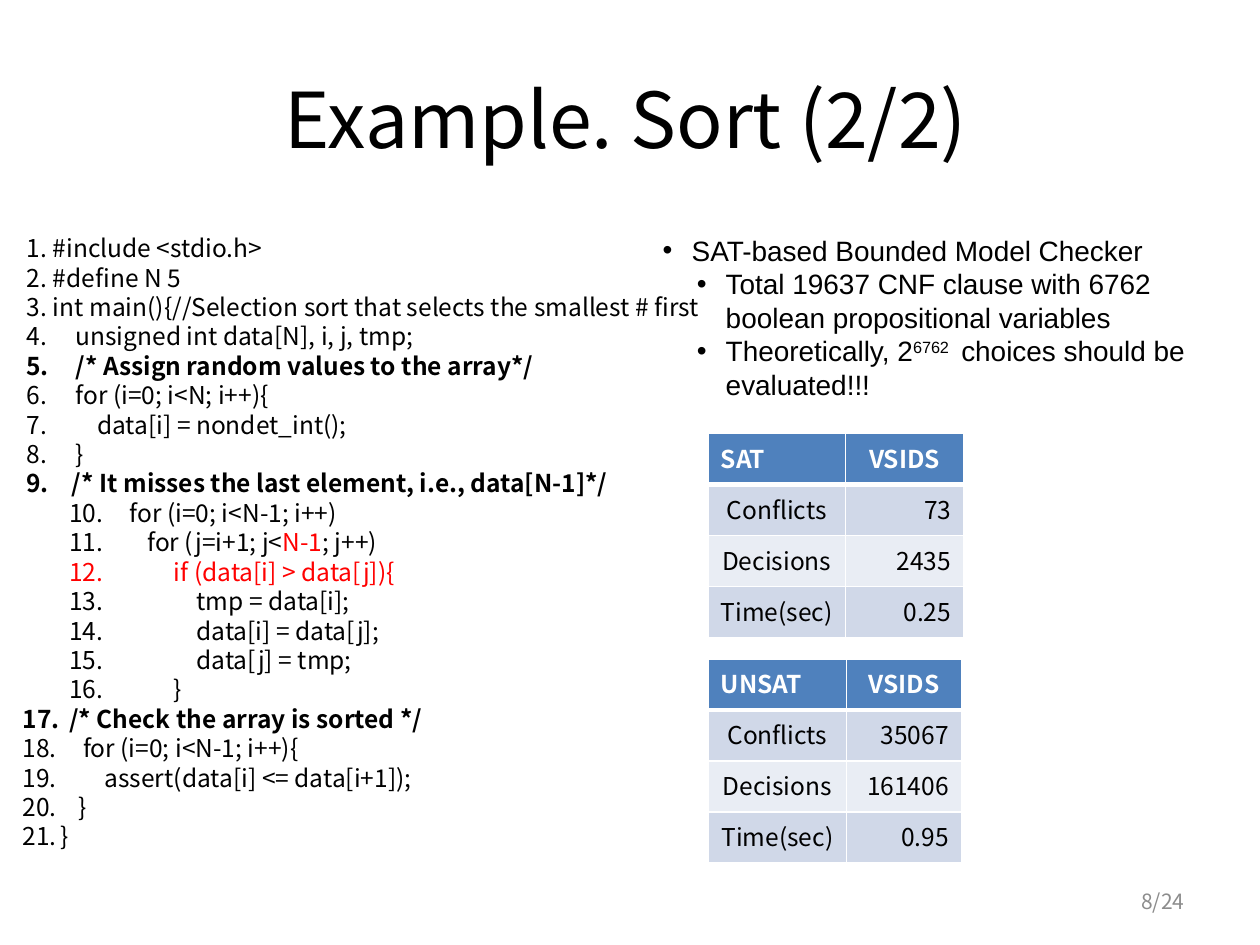
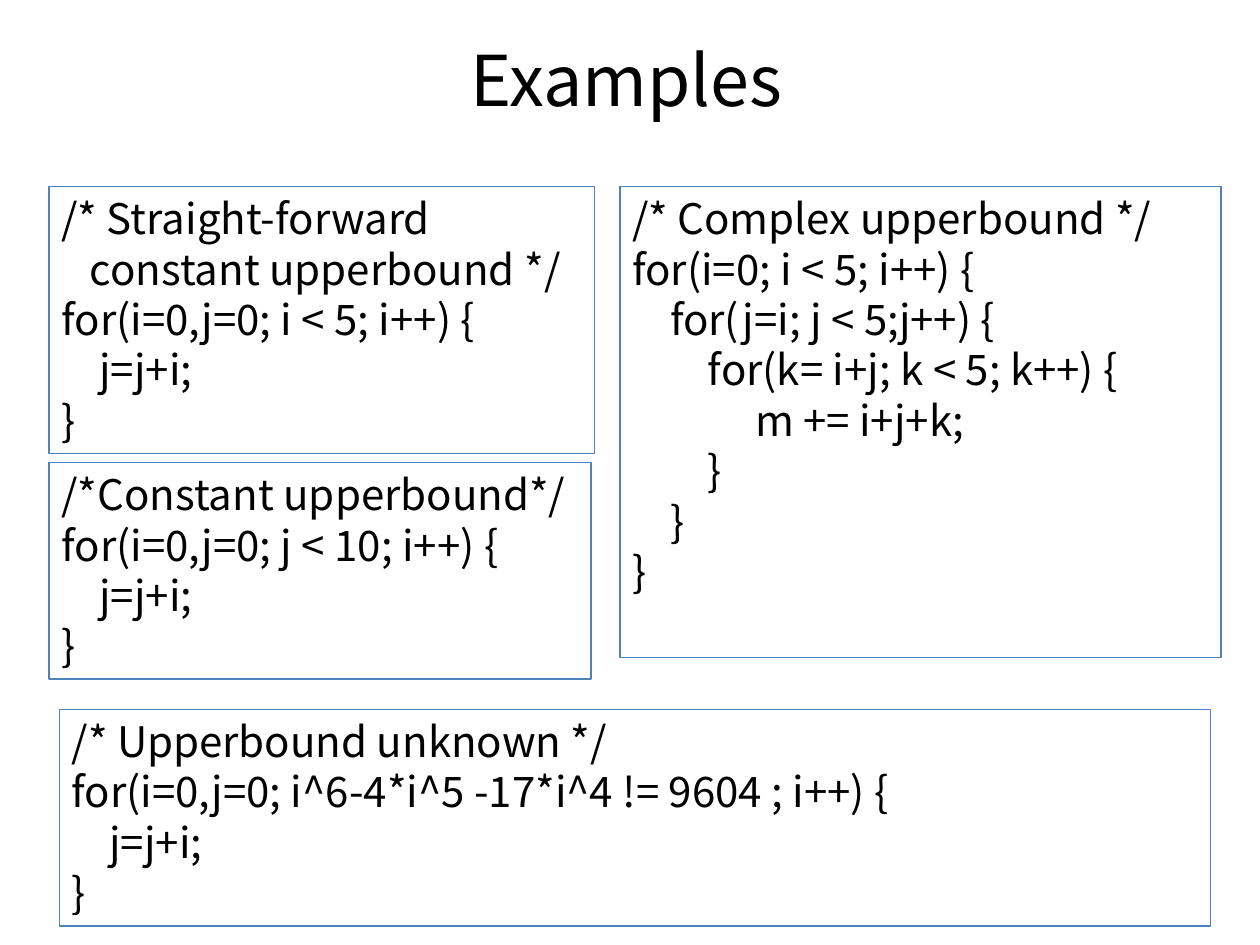
import dataclasses
import typing

import pptx
import pptx.dml.color
import pptx.enum.dml
import pptx.enum.shapes
import pptx.enum.text
import pptx.oxml
import pptx.oxml.ns
import pptx.util

Inches = pptx.util.Inches
Pt = pptx.util.Pt
Align = pptx.enum.text.PP_ALIGN
Anchor = pptx.enum.text.MSO_ANCHOR

# Shared look
SANS = "Noto Sans CJK KR"
BULLET_FONT = "Arial"
BLACK, WHITE, RED, GREY = "000000", "FFFFFF", "FF0000", "8C8C8C"
BLUE, BAND_DARK, BAND_LIGHT = "4F81BD", "D0D8E8", "E9EDF4"
LINE_PITCH = 1.2
LEVEL_WIDTH = 0.3
TWO_CONTENT, TITLE_ONLY = 3, 5


@dataclasses.dataclass
class Area:
    left: float
    top: float
    width: float
    height: float

    def lengths(self) -> list:
        return [Inches(value) for value in dataclasses.astuple(self)]


@dataclasses.dataclass
class Span:
    text: str
    bold: bool = False
    color: str = BLACK
    superscript: bool = False


@dataclasses.dataclass
class CodeLine:
    number_at: float
    code_at: float
    spans: list[Span]


@dataclasses.dataclass
class ListItem:
    margin: float
    spans: list[Span]


@dataclasses.dataclass
class CodeBox:
    area: Area
    lines: list[tuple[float, str]]


@dataclasses.dataclass
class ResultTable:
    area: Area
    widths: list[float]
    rows: list[tuple[str, str]]


# Content of the first slide
def code(number_at: float, code_at: float, text: str, **style) -> CodeLine:
    return CodeLine(number_at, code_at, [Span(text, **style)])


SORT_CODE = [
    code(0.03, 0.24, "#include <stdio.h>"),
    code(0.03, 0.24, "#define N 5"),
    code(0.03, 0.24, "int main(){//Selection sort that selects the smallest # first"),
    code(0.03, 0.42, "unsigned int data[N], i, j, tmp;"),
    code(0.03, 0.42, "/* Assign random values to the array*/", bold=True),
    code(0.03, 0.42, "for (i=0; i<N; i++){"),
    code(0.03, 0.59, "data[i] = nondet_int();"),
    code(0.03, 0.42, "}"),
    code(0.03, 0.39, "/* It misses the last element, i.e., data[N-1]*/", bold=True),
    code(0.37, 0.85, "for (i=0; i<N-1; i++)"),
    CodeLine(0.37, 0.99, [Span("for (j=i+1; j<"), Span("N-1", color=RED), Span("; j++)")]),
    code(0.37, 1.2, "if (data[i] > data[j]){", color=RED),
    code(0.37, 1.38, "tmp = data[i];"),
    code(0.37, 1.38, "data[i] = data[j];"),
    code(0.37, 1.38, "data[j] = tmp;"),
    code(0.37, 1.2, "}"),
    code(0, 0.37, "/* Check the array is sorted */", bold=True),
    code(0, 0.48, "for (i=0; i<N-1; i++){"),
    code(0, 0.65, "assert(data[i] <= data[i+1]);"),
    code(0, 0.44, "}"),
    code(0, 0.3, "}"),
]

CHECKER_NOTES = [
    ListItem(0.23, [Span("SAT-based Bounded Model Checker")]),
    ListItem(0.5, [Span("Total 19637 CNF clause with 6762 boolean propositional variables")]),
    ListItem(0.5, [Span("Theoretically, 2"), Span("6762 ", superscript=True),
                   Span(" choices should be evaluated!!!")]),
]

RESULTS = [
    ResultTable(Area(5.62, 3.44, 2.03, 1.62), [1.09, 0.94],
                [("SAT", "VSIDS"), ("Conflicts", "73"),
                 ("Decisions", "2435"), ("Time(sec)", "0.25")]),
    ResultTable(Area(5.62, 5.23, 2.01, 1.62), [1.1, 0.91],
                [("UNSAT", "VSIDS"), ("Conflicts", "35067"),
                 ("Decisions", "161406"), ("Time(sec)", "0.95")]),
]

# Content of the second slide: nesting level and text of each code line
LOOP_BOXES = [
    CodeBox(Area(0.39, 1.48, 4.33, 2.12),
            [(0, "/* Straight-forward"), (0.75, "constant upperbound */"),
             (0, "for(i=0,j=0; i < 5; i++) {"), (1, "j=j+i;"), (0, "}")]),
    CodeBox(Area(0.39, 3.67, 4.3, 1.72),
            [(0, "/*Constant upperbound*/"), (0, "for(i=0,j=0; j < 10; i++) {"),
             (1, "j=j+i;"), (0, "}")]),
    CodeBox(Area(4.92, 1.48, 4.77, 3.74),
            [(0, "/* Complex upperbound */"), (0, "for(i=0; i < 5; i++) {"),
             (1, "for(j=i; j < 5;j++) {"), (2, "for(k= i+j; k < 5; k++) {"),
             (3.25, "m += i+j+k;"), (2, "}"), (1, "}"), (0, "}")]),
    CodeBox(Area(0.47, 5.63, 9.14, 1.72),
            [(0, "/* Upperbound unknown */"),
             (0, "for(i=0,j=0; i^6-4*i^5 -17*i^4 != 9604 ; i++) {"),
             (1, "j=j+i;"), (0, "}")]),
]


# Text helpers
def rgb(color: str) -> pptx.dml.color.RGBColor:
    return pptx.dml.color.RGBColor.from_string(color)


def add_text(para, text: str, *, size: float, font: str = SANS, color: str = BLACK,
             bold: bool = False, superscript: bool = False,
             align: typing.Optional[Align] = None) -> None:
    if align is not None:
        para.alignment = align
    span = para.add_run()
    span.text = text
    span.font.name = font
    span.font.size = Pt(size)
    span.font.bold = bold
    span.font.color.rgb = rgb(color)
    if superscript:
        span._r.get_or_add_rPr().set("baseline", "30000")


def add_spans(para, spans: list[Span], size: float, font: str) -> None:
    for span in spans:
        add_text(para, span.text, size=size, font=font, color=span.color,
                 bold=span.bold, superscript=span.superscript)


def next_para(frame, index: int, size: float):
    para = frame.paragraphs[0] if index == 0 else frame.add_paragraph()
    para.alignment = Align.LEFT
    para.line_spacing = Pt(size * LINE_PITCH)
    para.space_before = para.space_after = Pt(0)
    return para


def set_indent(para, margin: float, first: float = 0) -> None:
    properties = para._p.get_or_add_pPr()
    properties.set("marL", str(Inches(margin)))
    properties.set("indent", str(Inches(first)))


def add_bullet(para, tag: str, **attributes: str) -> None:
    properties = para._p.get_or_add_pPr()
    for name, values in (("a:buFont", {"typeface": BULLET_FONT}), (tag, attributes)):
        if name == "a:buFont" and tag == "a:buAutoNum":
            values = {"typeface": SANS}
        element = properties.makeelement(pptx.oxml.ns.qn(name), values)
        properties.append(element)


def place(box, area: Area) -> None:
    box.left, box.top, box.width, box.height = area.lengths()


def prepare_frame(box, anchor: Anchor = Anchor.TOP):
    frame = box.text_frame
    frame.word_wrap = True
    frame.auto_size = pptx.enum.text.MSO_AUTO_SIZE.NONE
    frame.vertical_anchor = anchor
    return frame


# Slide parts
def set_title(page, text: str, top: float, size: float) -> None:
    box = page.shapes.title
    place(box, Area(0.47, top, 9, 1.25))
    frame = prepare_frame(box, Anchor.MIDDLE)
    add_text(frame.paragraphs[0], text, size=size, align=Align.CENTER)


def fill_numbered_code(box, area: Area, lines: list[CodeLine]) -> None:
    place(box, area)
    frame = prepare_frame(box)
    for index, line in enumerate(lines):
        para = next_para(frame, index, 14)
        set_indent(para, line.code_at, line.number_at - line.code_at)
        add_bullet(para, "a:buAutoNum", type="arabicPeriod", startAt=str(index + 1))
        add_spans(para, line.spans, 14, SANS)


def fill_bullets(box, area: Area, items: list[ListItem]) -> None:
    place(box, area)
    frame = prepare_frame(box)
    for index, item in enumerate(items):
        para = next_para(frame, index, 16)
        set_indent(para, item.margin, -0.23)
        add_bullet(para, "a:buChar", char="•")
        add_spans(para, item.spans, 16, BULLET_FONT)


def set_borders(cell, row: int) -> None:
    top = 3 if row == 1 else 1
    bottom = 3 if row == 0 else 1
    properties = cell._tc.get_or_add_tcPr()
    for index, (side, width) in enumerate(zip("LRTB", (1, 1, top, bottom))):
        border = pptx.oxml.parse_xml(
            f'<a:ln{side} {pptx.oxml.ns.nsdecls("a")} w="{Pt(width)}"><a:solidFill>'
            f'<a:srgbClr val="{WHITE}"/></a:solidFill></a:ln{side}>')
        properties.insert(index, border)


def add_results(page, results: ResultTable) -> None:
    count = len(results.rows)
    table = page.shapes.add_table(count, 2, *results.area.lengths()).table
    for column, width in zip(table.columns, results.widths):
        column.width = Inches(width)
    for row, values in enumerate(results.rows):
        header = row == 0
        fill = BLUE if header else (BAND_DARK if row % 2 else BAND_LIGHT)
        aligns = (Align.LEFT, Align.CENTER) if header else (Align.CENTER, Align.RIGHT)
        for column, (text, align) in enumerate(zip(values, aligns)):
            cell = table.cell(row, column)
            cell.fill.solid()
            cell.fill.fore_color.rgb = rgb(fill)
            set_borders(cell, row)
            add_text(cell.text_frame.paragraphs[0], text, size=14, bold=header,
                     color=WHITE if header else BLACK, align=align)


def add_page_number(page, text: str) -> None:
    box = page.shapes.add_textbox(*Area(8.36, 6.95, 1.14, 0.4).lengths())
    frame = prepare_frame(box, Anchor.MIDDLE)
    add_text(frame.paragraphs[0], text, size=12, color=GREY, align=Align.RIGHT)


def add_code_box(page, code_box: CodeBox) -> None:
    box = page.shapes.add_shape(pptx.enum.shapes.MSO_SHAPE.RECTANGLE,
                                *code_box.area.lengths())
    box.shadow.inherit = False
    box.fill.background()
    box.line.color.rgb = rgb(BLUE)
    box.line.width = Pt(0.75)
    frame = prepare_frame(box)
    for index, (level, text) in enumerate(code_box.lines):
        para = next_para(frame, index, 24)
        set_indent(para, level * LEVEL_WIDTH)
        add_text(para, text, size=24)


# Slides
def build_sort_page(deck) -> None:
    page = deck.slides.add_slide(deck.slide_layouts[TWO_CONTENT])
    set_title(page, "Example. Sort (2/2)", top=0.31, size=44)
    fill_numbered_code(page.placeholders[1], Area(0.08, 1.8, 5.95, 5.05), SORT_CODE)
    fill_bullets(page.placeholders[2], Area(5.16, 1.8, 4.84, 1.72), CHECKER_NOTES)
    for results in RESULTS:
        add_results(page, results)
    add_page_number(page, "8/24")


def build_loops_page(deck) -> None:
    page = deck.slides.add_slide(deck.slide_layouts[TITLE_ONLY])
    set_title(page, "Examples", top=0, size=40)
    for code_box in LOOP_BOXES:
        add_code_box(page, code_box)


def main() -> None:
    deck = pptx.Presentation()
    deck.slide_width, deck.slide_height = Inches(10), Inches(7.5)
    build_sort_page(deck)
    build_loops_page(deck)
    deck.save("out.pptx")


if __name__ == "__main__":
    main()
